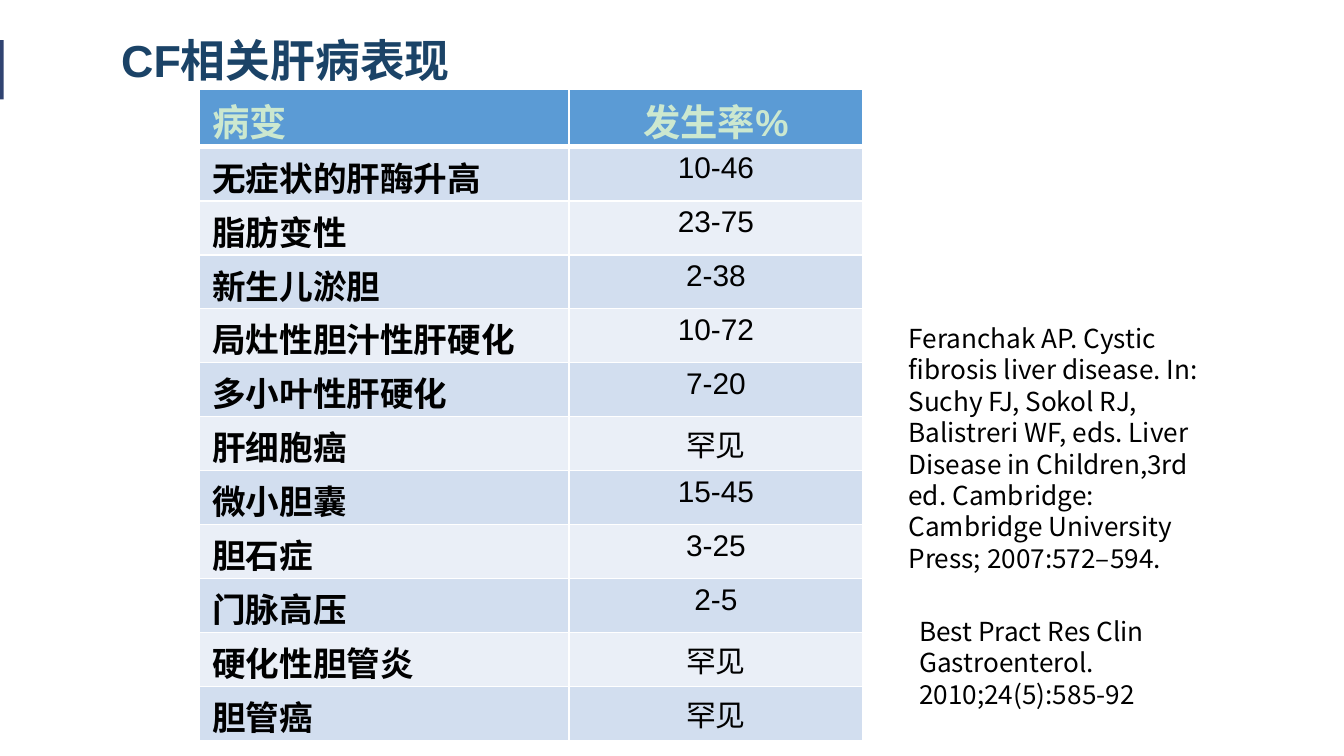
from dataclasses import dataclass

from lxml.etree import SubElement
from pptx import Presentation
from pptx.dml.color import RGBColor
from pptx.enum.shapes import MSO_SHAPE
from pptx.enum.text import MSO_ANCHOR, MSO_AUTO_SIZE, PP_ALIGN
from pptx.oxml.ns import qn
from pptx.util import Cm, Pt


@dataclass(frozen=True)
class Theme:
    background: str = "FFFFFF"
    accent: str = "304371"
    title: str = "1B4367"
    header_fill: str = "5B9BD5"
    header_text: str = "CCE8CF"
    bands: tuple = ("D2DEEF", "EAEFF7")
    border: str = "FFFFFF"
    text: str = "000000"
    latin: str = "Arial"
    cjk: str = "Noto Sans CJK SC"
    title_size: float = 24
    header_size: float = 20
    label_size: float = 18
    value_size: float = 16
    citation_size: float = 14
    citation_leading: float = 16.8


THEME = Theme()

HEADERS = ("病变", "发生率%")
LESIONS = (
    ("无症状的肝酶升高", "10-46"),
    ("脂肪变性", "23-75"),
    ("新生儿淤胆", "2-38"),
    ("局灶性胆汁性肝硬化", "10-72"),
    ("多小叶性肝硬化", "7-20"),
    ("肝细胞癌", "罕见"),
    ("微小胆囊", "15-45"),
    ("胆石症", "3-25"),
    ("门脉高压", "2-5"),
    ("硬化性胆管炎", "罕见"),
    ("胆管癌", "罕见"),
)
CITATIONS = (
    ("Feranchak AP. Cystic fibrosis liver disease. In: Suchy FJ, Sokol RJ, "
     "Balistreri WF, eds. Liver Disease in Children,3rd ed. Cambridge: "
     "Cambridge University Press; 2007:572–594.",
     (16.92, 5.97, 6.15, 5.05)),
    ("Best Pract Res Clin Gastroenterol. 2010;24(5):585-92",
     (17.12, 11.51, 5.89, 2.06)),
)


def rgb(color):
    return RGBColor.from_string(color)


def write(tf, text, size, color, font, bold=False, align=PP_ALIGN.LEFT):
    """Fill a text frame with one formatted paragraph and return it."""
    tf.text = text
    p = tf.paragraphs[0]
    p.alignment = align
    for r in p.runs:
        r.font.size, r.font.bold, r.font.name = Pt(size), bold, font
        r.font.color.rgb = rgb(color)
        SubElement(r.font._element, qn("a:ea"), typeface=THEME.cjk)
    return p


def set_borders(cell, bottom):
    """Draw 1 pt borders, with the bottom one of the given width."""
    tcPr = cell._tc.get_or_add_tcPr()
    for i, (side, width) in enumerate((("L", 1), ("R", 1), ("T", 1), ("B", bottom))):
        ln = tcPr.makeelement(qn(f"a:ln{side}"), {"w": str(Pt(width))})
        fill = SubElement(ln, qn("a:solidFill"))
        SubElement(fill, qn("a:srgbClr"), val=THEME.border)
        tcPr.insert(i, ln)


def add_accent_bar(slide):
    sp = slide.shapes.add_shape(MSO_SHAPE.RECTANGLE, Cm(-0.03), Cm(0.76), Cm(0.1), Cm(1.12))
    sp.shadow.inherit = False
    sp.fill.solid()
    sp.fill.fore_color.rgb = rgb(THEME.accent)
    sp.line.fill.background()


def add_title(slide, text):
    title = slide.shapes.title
    title.left, title.top, title.width, title.height = Cm(2.11), Cm(0.51), Cm(11.02), Cm(1.22)
    tf = title.text_frame
    tf.margin_left = tf.margin_right = Cm(0.18)
    tf.margin_top = tf.margin_bottom = Cm(0.1)
    tf.vertical_anchor = MSO_ANCHOR.MIDDLE
    tf.auto_size = MSO_AUTO_SIZE.NONE
    write(tf, text, THEME.title_size, THEME.title, THEME.latin, bold=True)


def style_cell(cell, fill, margin_top, bottom_border):
    cell.fill.solid()
    cell.fill.fore_color.rgb = rgb(fill)
    cell.margin_top, cell.margin_bottom = Cm(margin_top), 0
    set_borders(cell, bottom_border)


def add_lesion_table(slide):
    widths, header_height, row_height = (6.99, 5.56), 1.09, 1.02
    height = header_height + row_height * len(LESIONS)
    table = slide.shapes.add_table(len(LESIONS) + 1, len(HEADERS), Cm(3.76), Cm(1.68),
                                   Cm(sum(widths)), Cm(height)).table
    for column, width in zip(table.columns, widths):
        column.width = Cm(width)
    aligns = (PP_ALIGN.LEFT, PP_ALIGN.CENTER)

    table.rows[0].height = Cm(header_height)
    for cell, text, align in zip(table.rows[0].cells, HEADERS, aligns):
        style_cell(cell, THEME.header_fill, 0.07, 3)
        write(cell.text_frame, text, THEME.header_size, THEME.header_text,
              THEME.latin, bold=True, align=align)

    body_styles = ((THEME.label_size, THEME.cjk, True), (THEME.value_size, THEME.latin, False))
    for i, lesion in enumerate(LESIONS):
        row = table.rows[i + 1]
        row.height = Cm(row_height)
        for cell, text, align, (size, font, bold) in zip(row.cells, lesion, aligns, body_styles):
            style_cell(cell, THEME.bands[i % 2], 0.1, 1)
            write(cell.text_frame, text, size, THEME.text, font, bold, align)


def add_citation(slide, text, box):
    tf = slide.shapes.add_textbox(*map(Cm, box)).text_frame
    tf.word_wrap = True
    p = write(tf, text, THEME.citation_size, THEME.text, THEME.cjk)
    p.line_spacing = Pt(THEME.citation_leading)


def main():
    prs = Presentation()
    prs.slide_width, prs.slide_height = Cm(25.4), Cm(14.29)
    slide = prs.slides.add_slide(prs.slide_layouts[5])
    slide.background.fill.solid()
    slide.background.fill.fore_color.rgb = rgb(THEME.background)
    add_accent_bar(slide)
    add_title(slide, "CF相关肝病表现")
    add_lesion_table(slide)
    for text, box in CITATIONS:
        add_citation(slide, text, box)
    prs.save("out.pptx")


if __name__ == "__main__":
    main()
